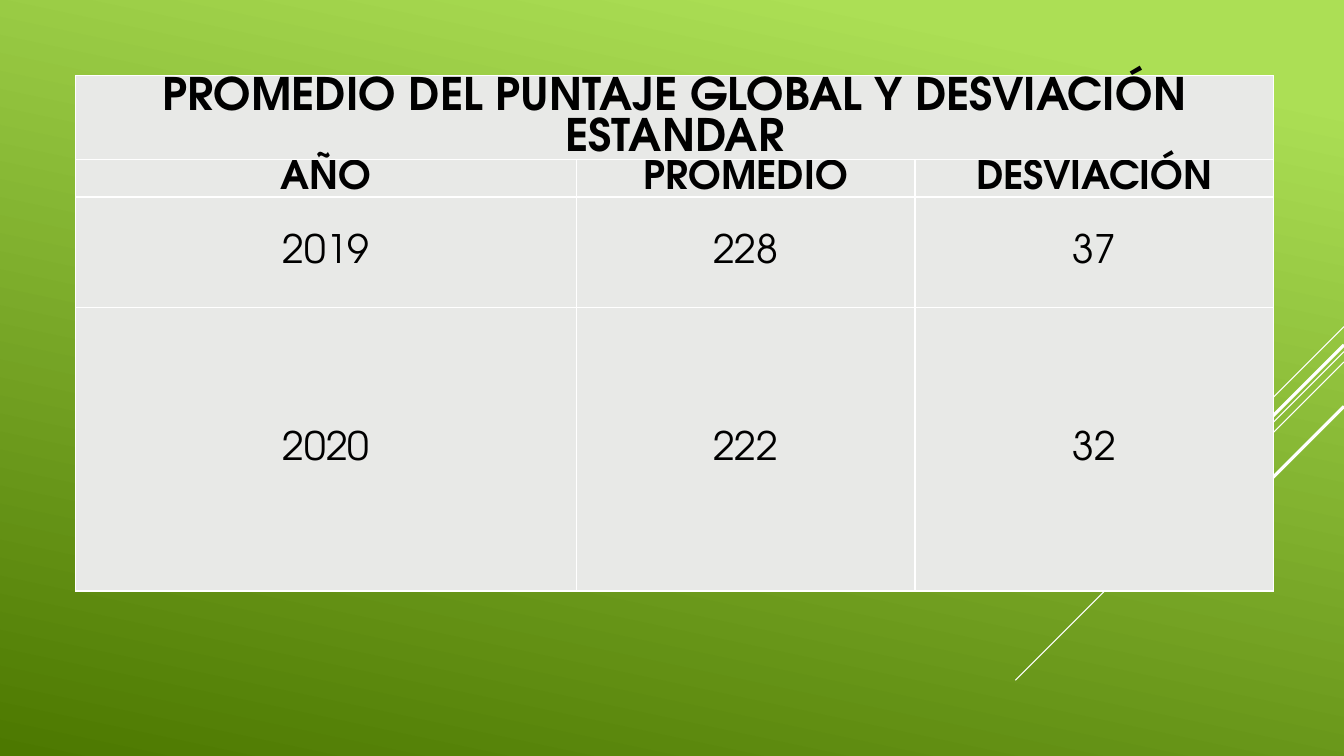
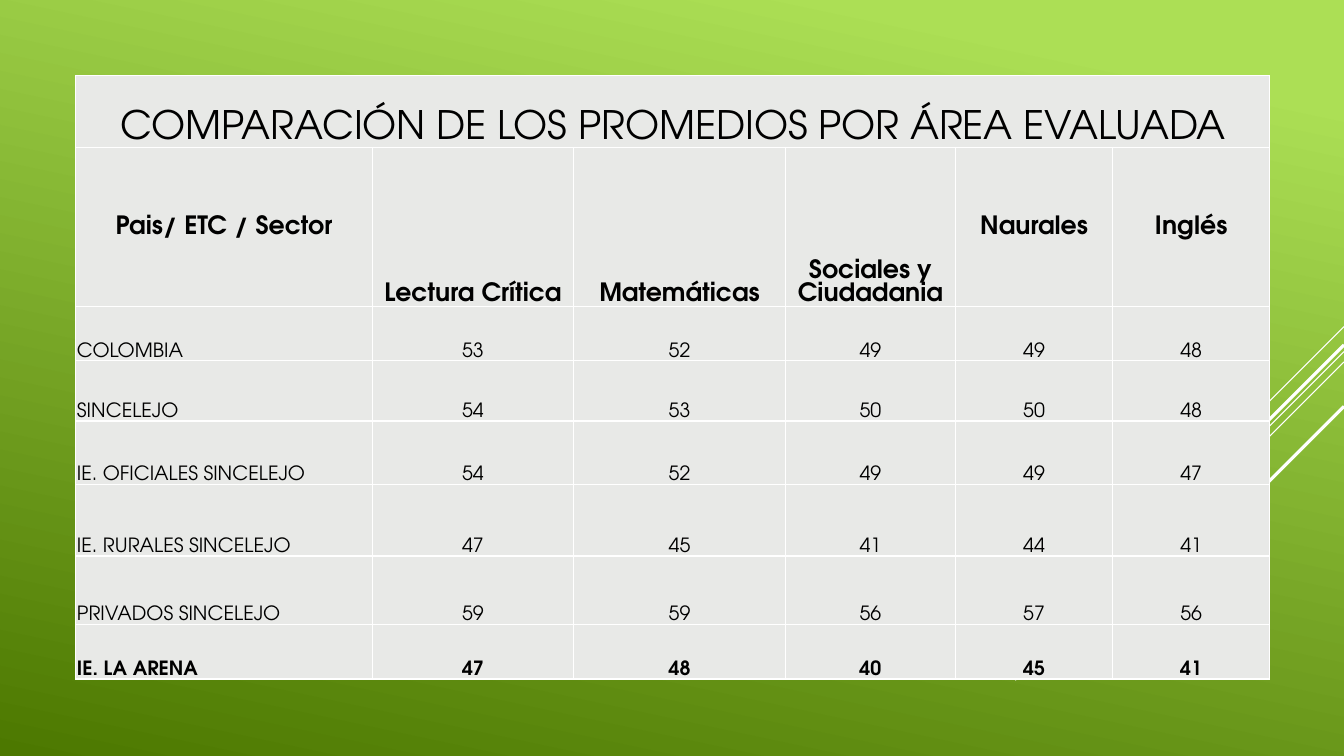
from dataclasses import dataclass

from lxml import etree
from pptx import Presentation
from pptx.dml.color import RGBColor
from pptx.enum.shapes import MSO_CONNECTOR
from pptx.enum.text import MSO_ANCHOR, PP_ALIGN
from pptx.oxml.ns import qn
from pptx.util import Cm, Pt

LINE = MSO_CONNECTOR.STRAIGHT
MIDDLE, BOTTOM = MSO_ANCHOR.MIDDLE, MSO_ANCHOR.BOTTOM
LEFT, CENTER = PP_ALIGN.LEFT, PP_ALIGN.CENTER

COLORS = {"light": "ACDF55", "dark": "4C7800", "line": "FFFFFF",
          "cell": "E8E9E7", "text": "000000"}
FONT = "TeX Gyre Adventor"
WIDTH, HEIGHT = 33.87, 19.05
EDGE = 1.91
INSET = 0.03


@dataclass
class Ray:
    """Diagonal from the right edge: start height, run and weight."""
    top: float
    run: float
    weight: float = 0.75


@dataclass
class Row:
    height: float
    texts: tuple[str, ...]
    size: float
    bold: bool = False
    middle: tuple[int, ...] = ()  # columns anchored in the middle
    first: PP_ALIGN = CENTER      # alignment of the first column


@dataclass
class Grid:
    widths: tuple[float, ...]
    rows: list[Row]


RAYS = [Ray(8.23, 2.54), Ray(8.86, 8.28), Ray(9.12, 5.26),
        Ray(8.69, 4.85, 2.25), Ray(10.24, 3.53, 2.25)]


def area(height: float, name: str, marks: str, bold: bool = False) -> Row:
    return Row(height, (name, *marks.split()), 14, bold, first=LEFT)


GRIDS = [
    Grid((12.62, 8.53, 9.04), [
        Row(1.78, ("PROMEDIO DEL PUNTAJE GLOBAL Y DESVIACIÓN ESTANDAR",), 32, True),
        Row(0.89, ("AÑO", "PROMEDIO", "DESVIACIÓN"), 28, True),
        Row(2.79, ("2019", "228", "37"), 28, middle=(0, 1, 2)),
        Row(7.14, ("2020", "222", "32"), 28, middle=(0, 1, 2)),
    ]),
    Grid((7.47, 5.08, 5.33, 4.29, 3.96, 3.96), [
        Row(1.8, ("COMPARACIÓN DE LOS PROMEDIOS POR ÁREA EVALUADA",), 28),
        Row(4.01, ("Pais/ ETC / Sector", "Lectura Crítica", " Matemáticas ",
                   "Sociales y Ciudadania", "Naurales", "Inglés"),
            18, True, middle=(0, 4, 5)),
        area(1.37, "COLOMBIA", "53 52 49 49 48"),
        area(1.52, "SINCELEJO", "54 53 50 50 48"),
        area(1.6, "IE. OFICIALES SINCELEJO", "54 52 49 49 47"),
        area(1.8, "IE. RURALES SINCELEJO", "47 45 41 44 41"),
        area(1.73, "PRIVADOS SINCELEJO", "59 59 56 57 56"),
        area(1.37, "IE. LA ARENA", "47 48 40 45 41", True),
    ]),
]


def color(name: str) -> RGBColor:
    return RGBColor.from_string(COLORS[name])


def set_back(master) -> None:
    fill = master.background.fill
    fill.gradient()
    fill.gradient_angle = 360 - 102
    for stop, name, place in zip(fill.gradient_stops, ("light", "dark"), (0.1, 1)):
        stop.color.rgb = color(name)
        stop.position = place


def add_rays(layout, slide) -> None:
    """Draw the rays on a slide, then move them to its layout."""
    lines = []
    for ray in RAYS:
        line = slide.shapes.add_connector(
            LINE, Cm(WIDTH), Cm(ray.top), Cm(WIDTH - ray.run), Cm(ray.top + ray.run))
        line.line.color.rgb = color("line")
        line.line.width = Pt(ray.weight)
        etree.SubElement(line.element.spPr, qn("a:effectLst"))
        lines.append(line)
    for line in lines:
        layout.shapes.element.append(line.element)


def set_edges(cell) -> None:
    props = cell._tc.get_or_add_tcPr()
    for spot, side in enumerate(("lnL", "lnR", "lnT", "lnB")):
        edge = etree.Element(qn(f"a:{side}"), w=str(Pt(1)))
        fill = etree.SubElement(edge, qn("a:solidFill"))
        etree.SubElement(fill, qn("a:srgbClr"), val=COLORS["line"])
        props.insert(spot, edge)


def set_cell(cell, row: Row, col: int) -> None:
    cell.fill.solid()
    cell.fill.fore_color.rgb = color("cell")
    set_edges(cell)
    cell.margin_left = cell.margin_right = cell.margin_top = Cm(INSET)
    cell.margin_bottom = 0
    cell.vertical_anchor = MIDDLE if col in row.middle else BOTTOM
    if col >= len(row.texts):
        return
    cell.text_frame.text = row.texts[col]
    para = cell.text_frame.paragraphs[0]
    para.alignment = CENTER if col else row.first
    font = para.runs[0].font
    font.name, font.size, font.bold = FONT, Pt(row.size), row.bold
    font.color.rgb = color("text")


def add_grid(slide, grid: Grid) -> None:
    table = slide.shapes.add_table(
        len(grid.rows), len(grid.widths), Cm(EDGE), Cm(EDGE),
        Cm(sum(grid.widths)), Cm(sum(row.height for row in grid.rows))).table
    table.first_row = table.horz_banding = False
    for col, width in enumerate(grid.widths):
        table.columns[col].width = Cm(width)
    for num, row in enumerate(grid.rows):
        table.rows[num].height = Cm(row.height)
        for col in range(len(grid.widths)):
            set_cell(table.cell(num, col), row, col)
    # Heading across all columns
    table.cell(0, 0).merge(table.cell(0, len(grid.widths) - 1))


def main() -> None:
    deck = Presentation()
    deck.slide_width, deck.slide_height = Cm(WIDTH), Cm(HEIGHT)

    # Shared background and rays
    set_back(deck.slide_master)
    layout = deck.slide_layouts[6]
    for holder in list(layout.placeholders):
        layout.shapes.element.remove(holder.element)
    slides = [deck.slides.add_slide(layout) for _ in GRIDS]
    add_rays(layout, slides[0])

    # One table a slide
    for slide, grid in zip(slides, GRIDS):
        add_grid(slide, grid)
    deck.save("out.pptx")


if __name__ == "__main__":
    main()
